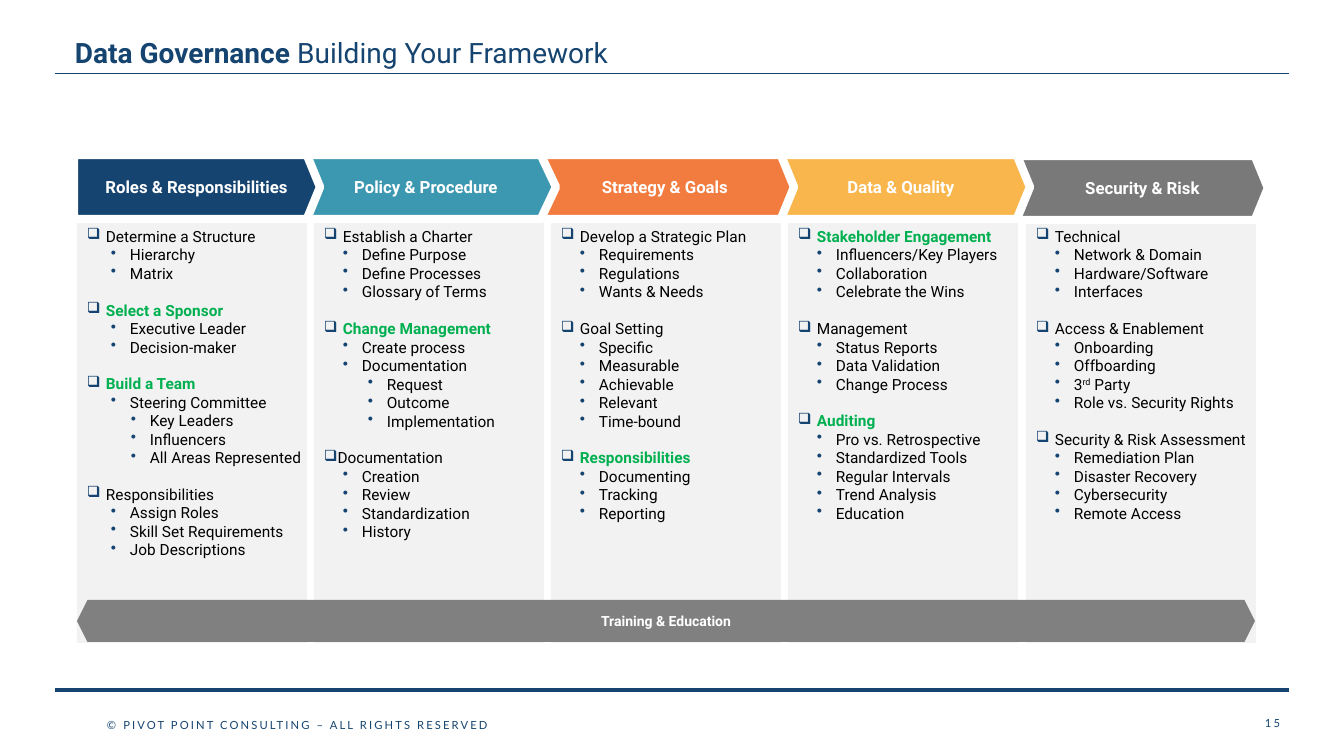
import pptx
import pptx.dml.color
import pptx.enum.shapes
import pptx.enum.text
import pptx.util
from dataclasses import dataclass
from lxml import etree

SHAPE = pptx.enum.shapes.MSO_SHAPE
ALIGN = pptx.enum.text.PP_ALIGN
ANCHOR = pptx.enum.text.MSO_ANCHOR
NS = "http://schemas.openxmlformats.org/drawingml/2006/main"


@dataclass(frozen=True)
class Theme:
    navy: str = "154470"
    teal: str = "3C98B1"
    orange: str = "F27B3F"
    amber: str = "F8B64D"
    slate: str = "79797A"
    gray: str = "808080"
    pale: str = "F2F2F2"
    white: str = "FFFFFF"
    black: str = "000000"
    green: str = "00B050"
    face: str = "Roboto"
    small: str = "Lato"
    title: int = 20
    head: int = 12
    body: int = 11
    bar: int = 10
    foot: int = 8
    gap: int = 13


def px(n):
    return round(n * 914400 / 100.8)


def rgb(code):
    return pptx.dml.color.RGBColor.from_string(code)


class Deck:
    """Draws styled elements on the current slide."""

    def __init__(self, theme):
        self.theme = theme
        self.file = pptx.Presentation()
        self.file.slide_width, self.file.slide_height = px(1344), px(756)
        self.slide = self.file.slides.add_slide(self.file.slide_layouts[6])

    def style(self, run, size, color, bold=False, face=None):
        font = run.font
        font.name = face or self.theme.face
        font.size = pptx.util.Pt(size)
        font.bold = bold
        font.color.rgb = rgb(color)

    def line(self, y, width):
        rule = self.slide.shapes.add_connector(
            pptx.enum.shapes.MSO_CONNECTOR.STRAIGHT, px(55), px(y), px(1289), px(y))
        rule.line.color.rgb = rgb(self.theme.navy)
        rule.line.width = pptx.util.Pt(width)
        etree.SubElement(rule._element.spPr, f"{{{NS}}}effectLst")

    def text(self, box):
        frame = self.slide.shapes.add_textbox(*map(px, box)).text_frame
        frame.word_wrap = True
        return frame

    def title(self, box, bold, plain):
        frame = self.text(box)
        frame.vertical_anchor = ANCHOR.MIDDLE
        para = frame.paragraphs[0]
        para.line_spacing = 0.9
        for words, strong in ((bold, True), (plain, False)):
            run = para.add_run()
            run.text = words
            self.style(run, self.theme.title, self.theme.navy, strong)

    def foot(self, box, words, align):
        frame = self.text(box)
        frame.text = words
        para = frame.paragraphs[0]
        para.alignment = align
        run = para.runs[0]
        self.style(run, self.theme.foot, self.theme.navy, face=self.theme.small)
        run._r.get_or_add_rPr().set("spc", "150")

    def shape(self, kind, box, fill, adjust=()):
        item = self.slide.shapes.add_shape(kind, *map(px, box))
        item.shadow.inherit = False
        item.fill.solid()
        item.fill.fore_color.rgb = rgb(fill)
        item.line.fill.background()
        for i, value in enumerate(adjust):
            item.adjustments[i] = value
        return item

    def label(self, item, words, size):
        frame = item.text_frame
        frame.word_wrap = True
        frame.vertical_anchor = ANCHOR.MIDDLE
        frame.text = words
        frame.paragraphs[0].alignment = ALIGN.CENTER
        self.style(frame.paragraphs[0].runs[0], size, self.theme.white, True)

    def arrow(self, box, fill, words, notch):
        item = self.shape(SHAPE.RIGHT_ARROW, box, fill, (1, notch))
        item.line.color.rgb = rgb(self.theme.white)
        item.line.width = pptx.util.Pt(6)
        item.text_frame.margin_left = px(22)
        self.label(item, words, self.theme.head)

    def bar(self, box, words):
        item = self.shape(SHAPE.LEFT_RIGHT_ARROW_CALLOUT, box, self.theme.gray,
                          (0.196, 0.5, 0.25, 0.988))
        self.label(item, words, self.theme.bar)

    def bullet(self, para, mark, left):
        props = para._p.get_or_add_pPr()
        props.set("marL", str(px(left)))
        props.set("indent", str(px(-19)))
        tint = etree.SubElement(props, f"{{{NS}}}buClr")
        etree.SubElement(tint, f"{{{NS}}}srgbClr", val=self.theme.navy)
        etree.SubElement(props, f"{{{NS}}}buChar", char=mark)

    def entry(self, para, words, mark, left):
        self.bullet(para, mark, left)
        para.alignment = ALIGN.LEFT
        key = words.startswith("*")
        color = self.theme.green if key else self.theme.black
        for i, part in enumerate(words.lstrip("*").split("^")):
            run = para.add_run()
            run.text = part
            self.style(run, self.theme.body, color, key)
            if i % 2:
                run._r.get_or_add_rPr().set("baseline", "30000")

    def panel(self, box, groups, inner):
        frame = self.shape(SHAPE.RECTANGLE, box, self.theme.pale).text_frame
        frame.word_wrap = True
        frame.vertical_anchor = ANCHOR.TOP
        frame.margin_right = 0
        for i, (head, *items) in enumerate(groups):
            para = frame.add_paragraph() if i else frame.paragraphs[0]
            tight = head.startswith("<")
            self.entry(para, head.lstrip("<"), "❑", 13 if tight else 19)
            if i:
                para.space_before = pptx.util.Pt(self.theme.gap)
            for words in items:
                left = 63 if words.startswith(">") else inner
                self.entry(frame.add_paragraph(), words.lstrip(">"), "•", left)


LOOK = Theme()
PILLARS = [
    ("Roles & Responsibilities", LOOK.navy, (74, 155, 246, 64), 0.204, 43, [
        ("Determine a Structure", "Hierarchy", "Matrix"),
        ("*Select a Sponsor", "Executive Leader", "Decision-maker"),
        ("*Build a Team", "Steering Committee", ">Key Leaders", ">Influencers",
         ">All Areas Represented"),
        ("Responsibilities", "Assign Roles", "Skill Set Requirements",
         "Job Descriptions")]),
    ("Policy & Procedure", LOOK.teal, (299, 155, 257, 64), 0.236, 38, [
        ("Establish a Charter", "Define Purpose", "Define Processes",
         "Glossary of Terms"),
        ("*Change Management", "Create process", "Documentation", ">Request",
         ">Outcome", ">Implementation"),
        ("<Documentation", "Creation", "Review", "Standardization", "History")]),
    ("Strategy & Goals", LOOK.orange, (537, 155, 257, 64), 0.204, 38, [
        ("Develop a Strategic Plan", "Requirements", "Regulations",
         "Wants & Needs"),
        ("Goal Setting", "Specific", "Measurable", "Achievable", "Relevant",
         "Time-bound"),
        ("*Responsibilities", "Documenting", "Tracking", "Reporting")]),
    ("Data & Quality", LOOK.amber, (773, 155, 257, 64), 0.204, 38, [
        ("*Stakeholder Engagement", "Influencers/Key Players", "Collaboration",
         "Celebrate the Wins"),
        ("Management", "Status Reports", "Data Validation", "Change Process"),
        ("*Auditing", "Pro vs. Retrospective", "Standardized Tools",
         "Regular Intervals", "Trend Analysis", "Education")]),
    ("Security & Risk", LOOK.slate, (1018, 156, 250, 64), 0.204, 38, [
        ("Technical", "Network & Domain", "Hardware/Software", "Interfaces"),
        ("Access & Enablement", "Onboarding", "Offboarding", "3^rd^ Party",
         "Role vs. Security Rights"),
        ("Security & Risk Assessment", "Remediation Plan", "Disaster Recovery",
         "Cybersecurity", "Remote Access")]),
]


def main():
    deck = Deck(LOOK)
    deck.line(73, 0.5)
    deck.line(690, 2.25)
    deck.foot((97, 713, 672, 24), "© PIVOT POINT CONSULTING – ALL RIGHTS RESERVED",
              ALIGN.LEFT)
    deck.foot((964, 711, 326, 24), "15", ALIGN.RIGHT)
    deck.title((65, 30, 1159, 49), "Data Governance ", "Building Your Framework")
    for i, (name, fill, box, notch, inner, groups) in reversed(list(enumerate(PILLARS))):
        deck.panel((77 + 949 * i // 4, 222, 230, 421), groups, inner)
        deck.arrow(box, fill, name, notch)
    deck.bar((77, 600, 1178, 42), "Training & Education")
    deck.file.save("out.pptx")


if __name__ == "__main__":
    main()
